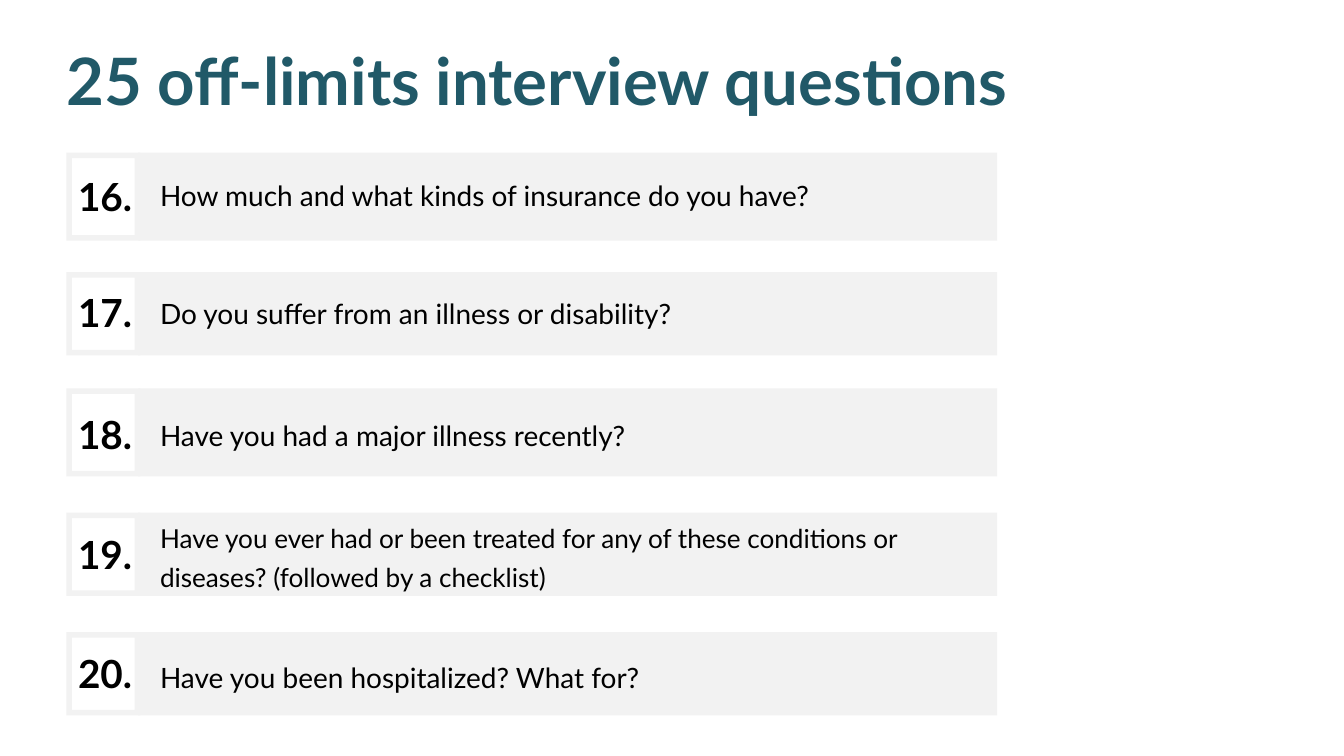
from pptx import Presentation
from pptx.dml.color import RGBColor
from pptx.enum.shapes import MSO_SHAPE
from pptx.enum.text import MSO_ANCHOR, MSO_AUTO_SIZE, PP_ALIGN
from pptx.util import Cm, Pt

RECTANGLE = MSO_SHAPE.RECTANGLE
TOP = MSO_ANCHOR.TOP
NO_AUTOFIT = MSO_AUTO_SIZE.NONE
LEFT = PP_ALIGN.LEFT

TEAL = RGBColor(0x21, 0x59, 0x68)
BLACK = RGBColor(0x00, 0x00, 0x00)
LIGHT_GREY = RGBColor(0xF2, 0xF2, 0xF2)

TITLE_ONLY = 5
FIRST_NUMBER = 16
MARGIN = 2.51
STRIP_LEFT, STRIP_WIDTH = 5.23, 32.46
FRAME_WIDTH, FRAME_BORDER = 2.79, 0.21
NUMBER_LEFT, NUMBER_WIDTH, NUMBER_HEIGHT = 2.95, 2.34, 1.68
QUESTION_LEFT = 6.05

# Strip top and height, question top, width, height and size, number top, wording
QUESTIONS = [
    (5.77, 3.33, 6.53, 30.76, 1.41, 30, 6.6,
     "How much and what kinds of insurance do you have?"),
    (10.29, 3.15, 11, 30.76, 1.41, 30, 11,
     "Do you suffer from an illness or disability?"),
    (14.68, 3.33, 15.6, 30.76, 1.41, 30, 15.6,
     "Have you had a major illness recently?"),
    (19.38, 3.15, 19.46, 28.7, 2.9, 28, 20.17,
     "Have you ever had or been treated for any of these conditions or "
     "diseases? (followed by a checklist)"),
    (23.9, 3.15, 24.77, 31.45, 1.41, 30, 24.64,
     "Have you been hospitalized? What for?"),
]


class SlideBuilder:
    font_name = "Lato"

    def __init__(self, slide):
        self.slide = slide

    def set_text(self, shape, text, size, spacing, color=BLACK, bold=False):
        frame = shape.text_frame
        frame.word_wrap = True
        frame.auto_size = NO_AUTOFIT
        frame.vertical_anchor = TOP
        frame.margin_left = frame.margin_right = 0
        frame.margin_top = frame.margin_bottom = 0
        frame.text = text
        paragraph = frame.paragraphs[0]
        paragraph.alignment = LEFT
        paragraph.line_spacing = Pt(spacing)
        paragraph.space_before = Pt(0)
        font = paragraph.font
        font.name, font.size, font.bold = self.font_name, Pt(size), bold
        font.color.rgb = color

    def title(self, text, left, top, width, height):
        title = self.slide.shapes.title
        title.left, title.top = Cm(left), Cm(top)
        title.width, title.height = Cm(width), Cm(height)
        self.set_text(title, text, 70, 79.8, TEAL, True)

    def text(self, text, left, top, width, height, size, spacing, bold=False):
        box = self.slide.shapes.add_textbox(
            Cm(left), Cm(top), Cm(width), Cm(height))
        self.set_text(box, text, size, spacing, bold=bold)

    def paint(self, shape):
        shape.fill.solid()
        shape.fill.fore_color.rgb = LIGHT_GREY
        shape.line.fill.background()
        shape.shadow.inherit = False

    def strip(self, left, top, width, height):
        self.paint(self.slide.shapes.add_shape(
            RECTANGLE, Cm(left), Cm(top), Cm(width), Cm(height)))

    def frame(self, left, top, width, height, border):
        right, bottom = left + width, top + height
        outer = [(left, top), (left, bottom), (right, bottom), (right, top)]
        # The inner outline runs the other way round, so it cuts a hole
        x1, x2 = left + border, right - border
        y1, y2 = top + border, bottom - border
        inner = [(x2, y2), (x1, y2), (x1, y1), (x2, y1)]
        outer, inner = ([(Cm(x), Cm(y)) for x, y in points]
                        for points in (outer, inner))
        builder = self.slide.shapes.build_freeform(*outer[0])
        builder.add_line_segments(outer[1:])
        builder.move_to(*inner[0])
        builder.add_line_segments(inner[1:])
        self.paint(builder.convert_to_shape())


def main():
    presentation = Presentation()
    presentation.slide_width, presentation.slide_height = Cm(50.8), Cm(28.58)
    layout = presentation.slide_layouts[TITLE_ONLY]
    builder = SlideBuilder(presentation.slides.add_slide(layout))

    # Heading
    builder.title("25 off-limits interview questions", MARGIN, 1.65, 42.06, 2.84)

    # Numbered questions
    for number, row in enumerate(QUESTIONS, FIRST_NUMBER):
        (top, height, question_top, question_width, question_height,
         size, number_top, question) = row
        builder.strip(STRIP_LEFT, top, STRIP_WIDTH, height)
        builder.frame(MARGIN, top, FRAME_WIDTH, height, FRAME_BORDER)
        builder.text(question, QUESTION_LEFT, question_top, question_width,
                     question_height, size, 42)
        builder.text(f"{number}.", NUMBER_LEFT, number_top, NUMBER_WIDTH,
                     NUMBER_HEIGHT, 41.5, 47.4, bold=True)

    presentation.save("out.pptx")


if __name__ == "__main__":
    main()
